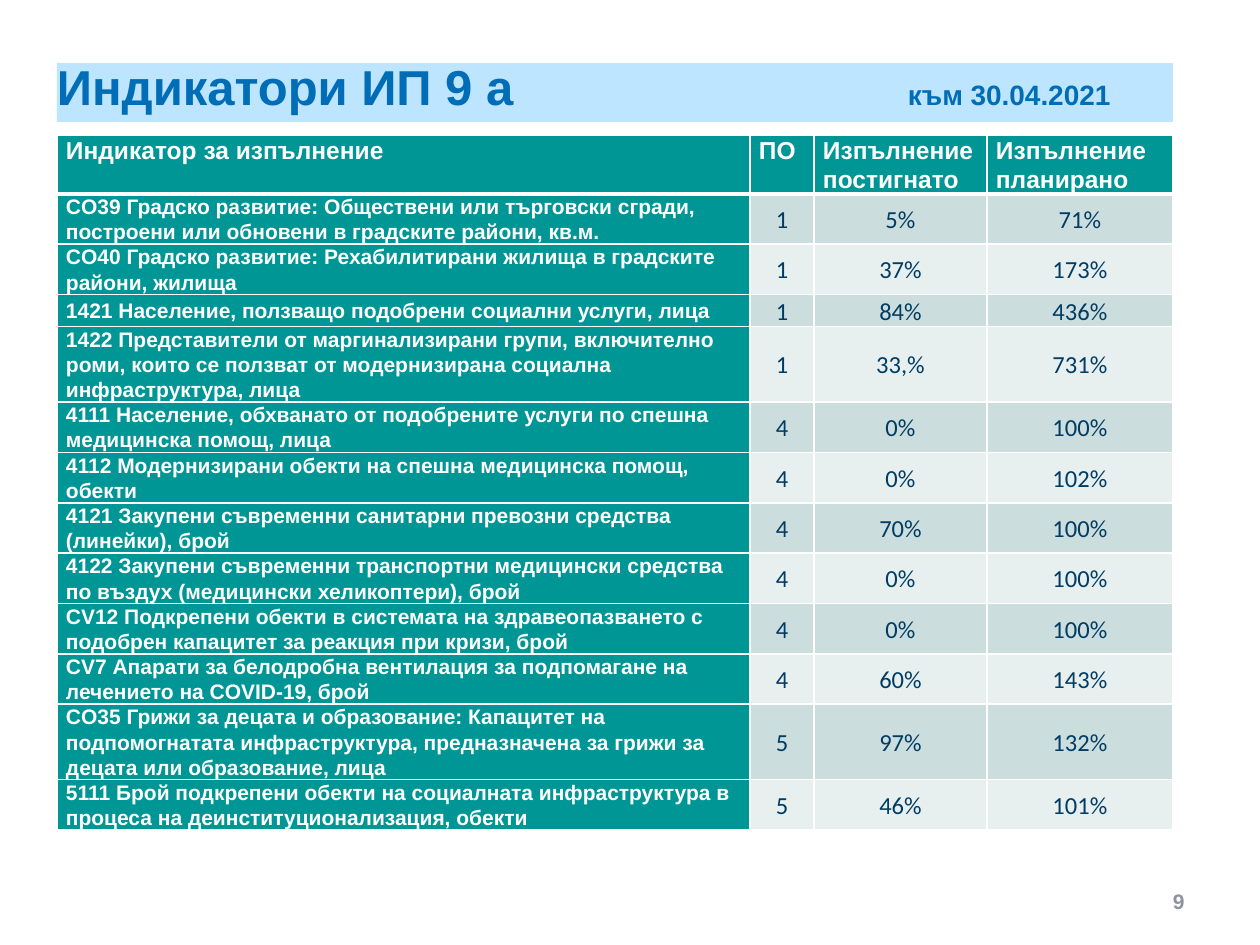
from dataclasses import dataclass

from lxml import etree
from pptx import Presentation
from pptx import util as u
from pptx.dml.color import RGBColor
from pptx.enum import text
from pptx.oxml import ns

TITLE = "Индикатори ИП 9 а"
DATE = "към 30.04.2021"
PAGE = "9"
HEADER = ("Индикатор за изпълнение", "ПО", "Изпълнение постигнато", "Изпълнение планирано")
INDICATORS = [
    ("CO39 Градско развитие: Обществени или търговски сгради, построени или обновени в градските райони, кв.м.", "1", "5%", "71%"),
    ("CO40 Градско развитие: Рехабилитирани жилища в градските райони, жилища", "1", "37%", "173%"),
    ("1421 Население, ползващо подобрени социални услуги, лица", "1", "84%", "436%"),
    ("1422 Представители от маргинализирани групи, включително роми, които се ползват от модернизирана социална инфраструктура, лица", "1", "33,%", "731%"),
    ("4111 Население, обхванато от подобрените услуги по спешна медицинска помощ, лица", "4", "0%", "100%"),
    ("4112 Модернизирани обекти на спешна медицинска помощ, обекти", "4", "0%", "102%"),
    ("4121 Закупени съвременни санитарни превозни средства (линейки), брой", "4", "70%", "100%"),
    ("4122 Закупени съвременни транспортни медицински средства по въздух (медицински хеликоптери), брой", "4", "0%", "100%"),
    ("CV12 Подкрепени обекти в системата на здравеопазването с подобрен капацитет за реакция при кризи, брой", "4", "0%", "100%"),
    ("CV7 Апарати за белодробна вентилация за подпомагане на лечението на COVID-19, брой", "4", "60%", "143%"),
    ("CO35 Грижи за децата и образование: Капацитет на подпомогнатата инфраструктура, предназначена за грижи за децата или образование, лица", "5", "97%", "132%"),
    ("5111 Брой подкрепени обекти на социалната инфраструктура в процеса на деинституционализация, обекти", "5", "46%", "101%"),
]
LINES = (2, 2, 1, 3, 2, 2, 2, 2, 2, 2, 3, 2)
ROW_HEIGHT = {1: 32, 2: 50, 3: 75}
HEADER_HEIGHT = 58
COLUMNS = (693, 64, 173, 186)
LEFT, WIDTH = 57, sum(COLUMNS)
DATE_TAB = 851


@dataclass(frozen=True)
class Theme:
    head: str = "Arial"
    body: str = "Calibri"
    title: str = "006DB6"
    title_fill: str = "BDE5FF"
    teal: str = "009696"
    white: str = "FFFFFF"
    navy: str = "003C64"
    gray: str = "8C929F"
    bands: tuple = ("CCDDDD", "E7EFEF")
    title_size: int = 28
    date_size: int = 16
    table_size: int = 14
    small_size: int = 12


T = Theme()


def px(n):
    return u.Emu(round(n * 914400 / 126))


def paint(fill, color):
    fill.solid()
    fill.fore_color.rgb = RGBColor.from_string(color)


def add_run(p, content, font, size, color, bold):
    r = p.add_run()
    r.text = content
    r.font.name, r.font.size, r.font.bold = font, u.Pt(size), bold
    r.font.color.rgb = RGBColor.from_string(color)


def add_border(cell, side, points):
    tc_pr = cell._tc.get_or_add_tcPr()
    ln = etree.SubElement(tc_pr, ns.qn(f"a:ln{side}"), w=str(u.Pt(points)))
    fill = etree.SubElement(ln, ns.qn("a:solidFill"))
    etree.SubElement(fill, ns.qn("a:srgbClr"), val=T.white)


def add_title(s):
    sp = s.shapes.title
    sp.left, sp.top, sp.width, sp.height = px(LEFT), px(63), px(WIDTH), px(59)
    paint(sp.fill, T.title_fill)
    tf = sp.text_frame
    tf.margin_left = tf.margin_top = tf.margin_right = tf.margin_bottom = 0
    tf.vertical_anchor = text.MSO_ANCHOR.TOP
    tf.auto_size = text.MSO_AUTO_SIZE.NONE
    p = tf.paragraphs[0]
    tabs = etree.SubElement(p._p.get_or_add_pPr(), ns.qn("a:tabLst"))
    etree.SubElement(tabs, ns.qn("a:tab"), pos=str(px(DATE_TAB)), algn="l")
    p.alignment = text.PP_ALIGN.LEFT
    p.line_spacing = u.Pt(30)
    add_run(p, TITLE + "\t", T.head, T.title_size, T.title, True)
    add_run(p, DATE, T.head, T.date_size, T.title, True)


def fill_cell(cell, content, row, col):
    header, label = row == 0, col == 0
    for side in "LRTB":
        thick = (row, side) in ((0, "B"), (1, "T"))
        add_border(cell, side, 3 if thick else 1)
    cell.margin_left = cell.margin_right = px(9)
    cell.margin_top = cell.margin_bottom = 0
    cell.vertical_anchor = text.MSO_ANCHOR.TOP if header else text.MSO_ANCHOR.MIDDLE
    p = cell.text_frame.paragraphs[0]
    p.line_spacing = 1.07
    p.space_before, p.space_after = u.Pt(0), u.Pt(8)
    if header or label:
        p.alignment = text.PP_ALIGN.JUSTIFY if header else text.PP_ALIGN.LEFT
        paint(cell.fill, T.teal)
        add_run(p, content, T.head, T.table_size if header else T.small_size, T.white, True)
    else:
        p.alignment = text.PP_ALIGN.CENTER
        paint(cell.fill, T.bands[(row - 1) % 2])
        add_run(p, content, T.body, T.table_size, T.navy, False)


def add_indicators(s):
    rows = [HEADER] + INDICATORS
    heights = [HEADER_HEIGHT] + [ROW_HEIGHT[n] for n in LINES]
    table = s.shapes.add_table(len(rows), len(COLUMNS), px(LEFT), px(135),
                               px(WIDTH), px(sum(heights))).table
    for column, width in zip(table.columns, COLUMNS):
        column.width = px(width)
    for i, (values, height) in enumerate(zip(rows, heights)):
        table.rows[i].height = px(height)
        for j, value in enumerate(values):
            fill_cell(table.cell(i, j), value, i, j)


def add_page_number(s):
    tf = s.shapes.add_textbox(px(903), px(876), px(294), px(50)).text_frame
    tf.word_wrap = True
    tf.vertical_anchor = text.MSO_ANCHOR.MIDDLE
    p = tf.paragraphs[0]
    p.alignment = text.PP_ALIGN.RIGHT
    add_run(p, PAGE, T.head, T.small_size, T.gray, True)


def main():
    prs = Presentation()
    prs.slide_width, prs.slide_height = px(1260), px(945)
    s = prs.slides.add_slide(prs.slide_layouts[5])
    add_title(s)
    add_indicators(s)
    add_page_number(s)
    prs.save("out.pptx")


if __name__ == "__main__":
    main()
